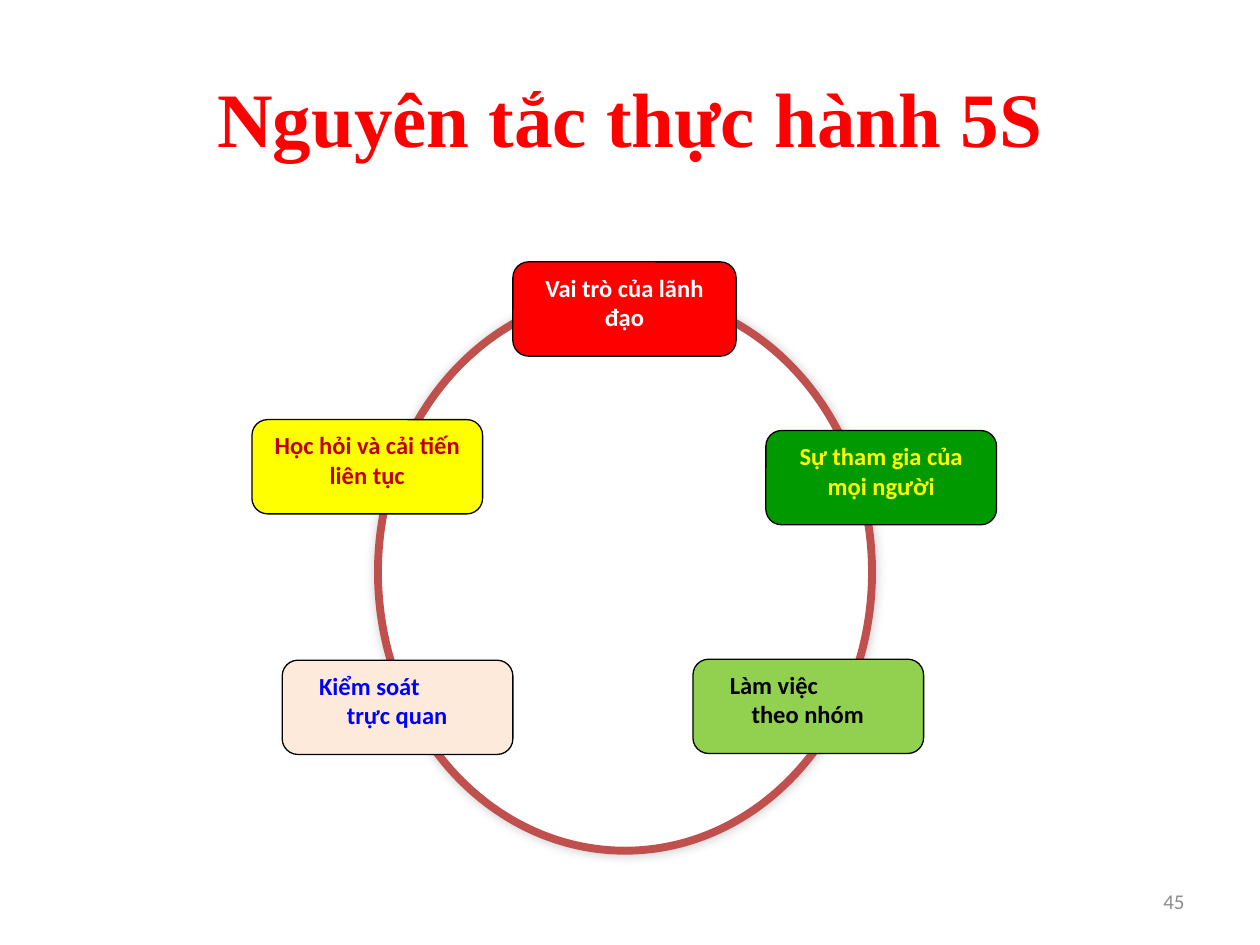
import lxml.etree
import pptx
import pptx.util
from pptx.dml.color import RGBColor
from pptx.enum.shapes import MSO_SHAPE
from pptx.enum.text import MSO_ANCHOR, PP_ALIGN
from pptx.oxml.ns import qn
from pptx.util import Cm, Pt

RED = RGBColor(0xFF, 0x00, 0x00)
WHITE = RGBColor(0xFF, 0xFF, 0xFF)
BLACK = RGBColor(0x00, 0x00, 0x00)
YELLOW = RGBColor(0xFF, 0xFF, 0x00)
MAROON = RGBColor(0xC0, 0x00, 0x00)
GREEN = RGBColor(0x00, 0x99, 0x00)
LIME = RGBColor(0x92, 0xD0, 0x50)
PEACH = RGBColor(0xFD, 0xEA, 0xDA)
BLUE = RGBColor(0x00, 0x00, 0xFF)
BRICK = RGBColor(0xC0, 0x50, 0x4D)
GREY = RGBColor(0x8C, 0x8C, 0x8C)

CARD_H = 1.9
# left, top and width within the ring's box, fill, ink, lines, line indents (cm)
CARDS = [
    (2.72, -0.64, 4.5, RED, WHITE, "Vai trò của lãnh đạo", ()),
    (-2.54, 2.54, 4.65, YELLOW, MAROON, "Học hỏi và cải tiến liên tục", ()),
    (7.82, 2.76, 4.65, GREEN, YELLOW, "Sự tham gia của mọi người", ()),
    (6.35, 7.37, 4.65, LIME, BLACK, "Làm việc\ntheo nhóm", (0.4, 0.84)),
    (-1.93, 7.39, 4.65, PEACH, BLUE, "Kiểm soát\ntrực quan", (0.4, 0.96)),
]


def style(frame, font, size, ink, bold, align):
    frame.word_wrap = True
    for para in frame.paragraphs:
        para.alignment = align
        for run in para.runs:
            run.font.name = font
            run.font.size = Pt(size)
            run.font.bold = bold
            run.font.color.rgb = ink


def add_label(slide, box, text, font, size, ink, bold, align):
    frame = slide.shapes.add_textbox(*map(Cm, box)).text_frame
    frame.text = text
    frame.vertical_anchor = MSO_ANCHOR.MIDDLE
    style(frame, font, size, ink, bold, align)


def add_form(slide, kind, box, fill, line, width):
    form = slide.shapes.add_shape(kind, *map(Cm, box))
    form.shadow.inherit = False
    form.fill.solid()
    form.fill.fore_color.rgb = fill
    form.line.color.rgb = line
    form.line.width = Pt(width)
    return form


def add_glow(form):
    """Give the form a soft, faint black shadow."""
    effects = form._element.spPr.find(qn("a:effectLst"))
    glow = lxml.etree.SubElement(effects, qn("a:outerShdw"), blurRad=str(Pt(6)),
                                 dist="0", dir="13500000", rotWithShape="0")
    ink = lxml.etree.SubElement(glow, qn("a:srgbClr"), val=str(BLACK))
    lxml.etree.SubElement(ink, qn("a:alpha"), val="20000")


def add_card(slide, box, fill, ink, text, indents):
    card = add_form(slide, MSO_SHAPE.ROUNDED_RECTANGLE, box, fill, BLACK, 0.75)
    frame = card.text_frame
    frame.text = text
    frame.vertical_anchor = MSO_ANCHOR.TOP
    align = PP_ALIGN.LEFT if indents else PP_ALIGN.CENTER
    style(frame, "Calibri", 14, ink, True, align)
    for para, indent in zip(frame.paragraphs, indents):
        para._p.get_or_add_pPr().set("marL", str(Cm(indent)))


def add_cycle(slide, box):
    """Draw the ring in the box, with the cards around it."""
    add_glow(add_form(slide, MSO_SHAPE.OVAL, box, WHITE, BRICK, 4.5))
    left, top = box[:2]
    for x, y, width, fill, ink, text, indents in CARDS:
        place = (left + x, top + y, width, CARD_H)
        add_card(slide, place, fill, ink, text, indents)


def main():
    deck = pptx.Presentation()
    deck.slide_width, deck.slide_height = Cm(25.4), Cm(19.05)
    slide = deck.slides.add_slide(deck.slide_layouts[6])
    add_label(slide, (1.27, 0.76, 22.86, 3.18), "Nguyên tắc thực hành 5S",
              "Times New Roman", 44, RED, True, PP_ALIGN.CENTER)
    add_label(slide, (18.2, 17.66, 5.93, 1.01), "45",
              "Calibri", 12, GREY, False, PP_ALIGN.RIGHT)
    add_cycle(slide, (7.62, 5.92, 9.96, 11.23))
    deck.save("out.pptx")


if __name__ == "__main__":
    main()
